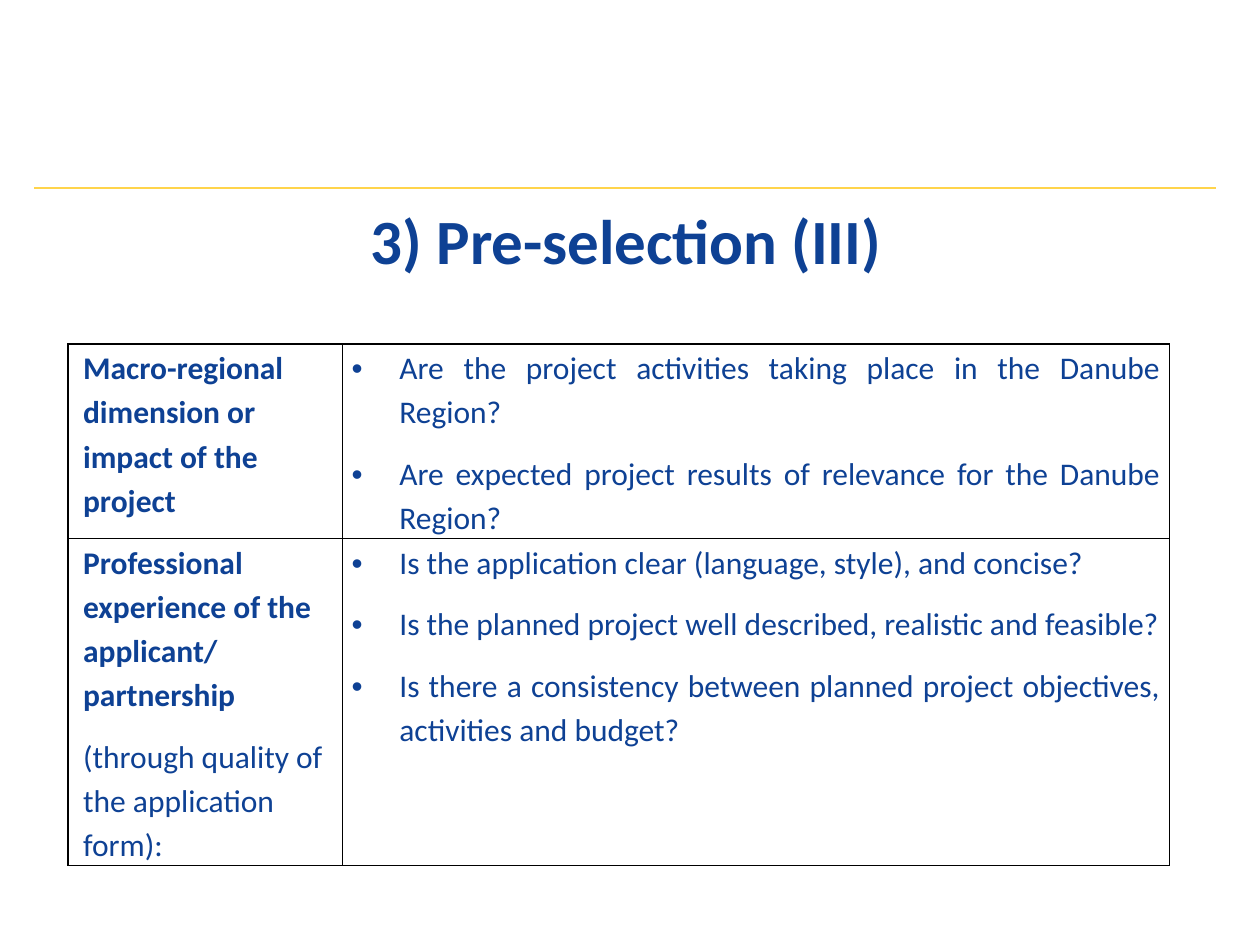
from lxml.etree import SubElement
from pptx import Presentation
from pptx.dml.color import RGBColor
from pptx.enum.shapes import MSO_CONNECTOR
from pptx.enum.text import MSO_ANCHOR, MSO_AUTO_SIZE, PP_ALIGN
from pptx.oxml.ns import qn
from pptx.util import Inches, Pt

BLUE = RGBColor(0x0E, 0x41, 0x94)
YELLOW = RGBColor(0xFF, 0xD4, 0x4B)
BLACK = RGBColor(0, 0, 0)
FONT = "Calibri"

# Content: each row holds a heading, an optional note and its questions
TITLE = "3) Pre-selection (III)"
CRITERIA = [
    ("Macro-regional dimension or impact of the project", None,
     ["Are the project activities taking place in the Danube Region?",
      "Are expected project results of relevance for the Danube Region?"]),
    ("Professional experience of the applicant/ partnership",
     "(through quality of the application form):",
     ["Is the application clear (language, style), and concise?",
      "Is the planned project well described, realistic and feasible?",
      "Is there a consistency between planned project objectives, activities and budget?"]),
]
COLUMN_WIDTHS = [2.18, 6.56]
ROW_HEIGHTS = [1.54, 2.59]
TABLE_LEFT, TABLE_TOP = 0.54, 2.73


def set_indent(paragraph, left, first=0.0):
    properties = paragraph._p.get_or_add_pPr()
    properties.set("marL", str(Inches(left)))
    properties.set("indent", str(Inches(first)))
    return properties


def add_text(paragraph, text, size, bold):
    run = paragraph.add_run()
    run.text = text
    run.font.name = FONT
    run.font.size = Pt(size)
    run.font.bold = bold
    run.font.color.rgb = BLUE


def draw_borders(cell):
    properties = cell._tc.get_or_add_tcPr()
    for index, side in enumerate(("a:lnL", "a:lnR", "a:lnT", "a:lnB")):
        line = properties.makeelement(qn(side), {"w": str(Pt(1))})
        properties.insert(index, line)
        fill = SubElement(line, qn("a:solidFill"))
        SubElement(fill, qn("a:srgbClr"), val=str(BLACK))


def fill_cell(cell, entries, bulleted):
    cell.margin_left = cell.margin_right = Inches(0.07)
    cell.margin_top = cell.margin_bottom = 0
    cell.fill.background()
    draw_borders(cell)
    frame = cell.text_frame
    for index, (text, bold) in enumerate(entries):
        paragraph = frame.add_paragraph() if index else frame.paragraphs[0]
        if bulleted:
            properties = set_indent(paragraph, 0.38, -0.38)
            SubElement(properties, qn("a:buFont"), typeface="Arial")
            SubElement(properties, qn("a:buChar"), char="•")
            paragraph.alignment = PP_ALIGN.JUSTIFY
        else:
            set_indent(paragraph, 0.05)
        paragraph.line_spacing = 1.15
        paragraph.space_before = Pt(3 if index else 0)
        paragraph.space_after = Pt(7)
        add_text(paragraph, text, 18, bold)


presentation = Presentation()
presentation.slide_width, presentation.slide_height = Inches(10), Inches(7.5)
slide = presentation.slides.add_slide(presentation.slide_layouts[5])

# Header rule
rule = slide.shapes.add_connector(MSO_CONNECTOR.STRAIGHT, Inches(9.65), Inches(1.49),
                                  Inches(0.27), Inches(1.49))
rule.line.color.rgb = YELLOW
rule.line.width = Pt(1.25)
SubElement(rule._element.spPr, qn("a:effectLst"))

# Title
title = slide.shapes.title
title.left, title.top, title.width, title.height = map(Inches, (1.09, 1.55, 7.64, 0.71))
title_frame = title.text_frame
title_frame.word_wrap = True
title_frame.auto_size = MSO_AUTO_SIZE.NONE
title_frame.vertical_anchor = MSO_ANCHOR.TOP
heading = title_frame.paragraphs[0]
set_indent(heading, 0.12)
heading.alignment = PP_ALIGN.CENTER
add_text(heading, TITLE, 36, True)

# Criteria table
table = slide.shapes.add_table(
    len(CRITERIA), len(COLUMN_WIDTHS), Inches(TABLE_LEFT), Inches(TABLE_TOP),
    Inches(sum(COLUMN_WIDTHS)), Inches(sum(ROW_HEIGHTS))).table
table.first_row = table.horz_banding = False
for column, width in zip(table.columns, COLUMN_WIDTHS):
    column.width = Inches(width)
for index, (criterion, note, questions) in enumerate(CRITERIA):
    table.rows[index].height = Inches(ROW_HEIGHTS[index])
    labels = [(criterion, True)] + ([(note, False)] if note else [])
    fill_cell(table.cell(index, 0), labels, bulleted=False)
    fill_cell(table.cell(index, 1), [(text, False) for text in questions], bulleted=True)

presentation.save("out.pptx")
